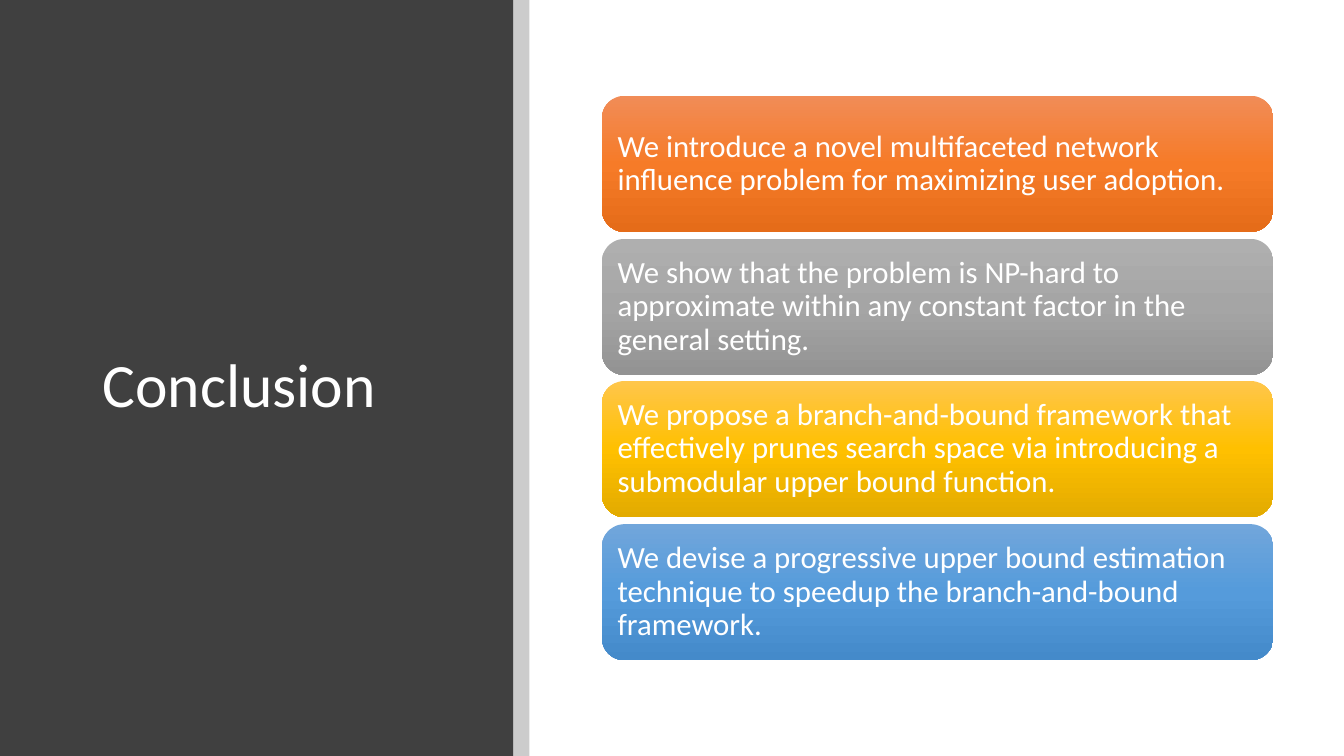
import copy
from dataclasses import dataclass

import pptx
import pptx.dml.color
import pptx.enum.shapes
import pptx.enum.text
import pptx.oxml
import pptx.oxml.ns
import pptx.shapes.autoshape
import pptx.slide
import pptx.text.text
import pptx.util

EMU_PER_PX = 9144  # 100 px to the inch


@dataclass(frozen=True)
class Theme:
    font: str = "Calibri"
    text: str = "FFFFFF"
    panel: str = "404040"
    divider: str = "000000"
    divider_opacity: int = 20
    title_size: int = 44
    card_size: int = 22
    line_spacing: float = 0.9


@dataclass(frozen=True)
class Box:
    left: int
    top: int
    width: int
    height: int

    def emu(self) -> list[pptx.util.Emu]:
        lengths = (self.left, self.top, self.width, self.height)
        return [px(length) for length in lengths]


@dataclass(frozen=True)
class Card:
    text: str
    gradient: tuple[str, str, str]


THEME = Theme()
SLIDE_WIDTH, SLIDE_HEIGHT = 1333, 750
PANEL = Box(0, 0, 509, SLIDE_HEIGHT)
DIVIDER = Box(PANEL.width, 0, 16, SLIDE_HEIGHT)
TITLE = Box(92, 89, 365, 591)
FIRST_CARD = Box(597, 95, 666, 135)
LAST_CARD_TOP = 520
CARD_INSET = 9

CARDS = [
    Card("We introduce a novel multifaceted network influence problem "
         "for maximizing user adoption.",
         ("F18C57", "F67B28", "E56C19")),
    Card("We show that the problem is NP-hard to approximate within any "
         "constant factor in the general setting.",
         ("AFAFAF", "A5A5A5", "939393")),
    Card("We propose a branch-and-bound framework that effectively prunes "
         "search space via introducing a submodular upper bound function.",
         ("FFC64B", "FFC000", "E3AB00")),
    Card("We devise a progressive upper bound estimation technique to "
         "speedup the branch-and-bound framework.",
         ("71A6DB", "559BDB", "448ACA")),
]


def px(length: int) -> pptx.util.Emu:
    return pptx.util.Emu(length * EMU_PER_PX)


def rgb(value: str) -> pptx.dml.color.RGBColor:
    return pptx.dml.color.RGBColor.from_string(value)


def set_attributes(target: object, values: dict[str, object]) -> None:
    for name, value in values.items():
        setattr(target, name, value)


def add_plain_shape(slide: pptx.slide.Slide, preset: str,
                    box: Box) -> pptx.shapes.autoshape.Shape:
    kind = pptx.enum.shapes.MSO_SHAPE[preset]
    shape = slide.shapes.add_shape(kind, *box.emu())
    shape.shadow.inherit = False
    shape.line.fill.background()
    return shape


def add_bar(slide: pptx.slide.Slide, box: Box, color: str,
            opacity: int = 100) -> None:
    shape = add_plain_shape(slide, "RECTANGLE", box)
    shape.fill.solid()
    shape.fill.fore_color.rgb = rgb(color)
    if opacity < 100:
        color_element = shape._element.spPr.find(".//" + pptx.oxml.ns.qn("a:srgbClr"))
        alpha = pptx.oxml.parse_xml(
            f'<a:alpha {pptx.oxml.ns.nsdecls("a")} val="{opacity * 1000}"/>')
        color_element.append(alpha)


def fill_gradient(shape: pptx.shapes.autoshape.Shape,
                  colors: tuple[str, str, str]) -> None:
    shape.fill.gradient()
    shape.fill.gradient_angle = 270  # counter-clockwise: top to bottom
    stop_list = shape._element.spPr.find(".//" + pptx.oxml.ns.qn("a:gsLst"))
    stop_list.append(copy.deepcopy(stop_list[-1]))
    for index, (stop, color) in enumerate(zip(shape.fill.gradient_stops, colors)):
        stop.color.rgb = rgb(color)
        stop.position = index / (len(colors) - 1)


def write_text(frame: pptx.text.text.TextFrame, text: str, size: int) -> None:
    set_attributes(frame, {
        "word_wrap": True,
        "vertical_anchor": pptx.enum.text.MSO_ANCHOR.MIDDLE,
    })
    paragraph = frame.paragraphs[0]
    paragraph.text = text
    set_attributes(paragraph, {
        "alignment": pptx.enum.text.PP_ALIGN.LEFT,
        "line_spacing": THEME.line_spacing,
    })
    set_attributes(paragraph.font, {"name": THEME.font, "size": pptx.util.Pt(size)})
    paragraph.font.color.rgb = rgb(THEME.text)


def add_card(slide: pptx.slide.Slide, card: Card, box: Box) -> None:
    shape = add_plain_shape(slide, "ROUNDED_RECTANGLE", box)
    fill_gradient(shape, card.gradient)
    sides = ("left", "top", "right", "bottom")
    set_attributes(shape.text_frame,
                   {f"margin_{side}": px(CARD_INSET) for side in sides})
    write_text(shape.text_frame, card.text, THEME.card_size)


def main() -> None:
    presentation = pptx.Presentation()
    set_attributes(presentation, {
        "slide_width": px(SLIDE_WIDTH),
        "slide_height": px(SLIDE_HEIGHT),
    })
    slide = presentation.slides.add_slide(presentation.slide_layouts[6])

    # Title panel
    add_bar(slide, PANEL, THEME.panel)
    title = slide.shapes.add_textbox(*TITLE.emu())
    write_text(title.text_frame, "Conclusion", THEME.title_size)
    add_bar(slide, DIVIDER, THEME.divider, THEME.divider_opacity)

    # Conclusion cards, evenly spread from first to last
    pitch = (LAST_CARD_TOP - FIRST_CARD.top) / (len(CARDS) - 1)
    for index, card in enumerate(CARDS):
        top = FIRST_CARD.top + round(index * pitch)
        add_card(slide, card,
                 Box(FIRST_CARD.left, top, FIRST_CARD.width, FIRST_CARD.height))

    presentation.save("out.pptx")


if __name__ == "__main__":
    main()
